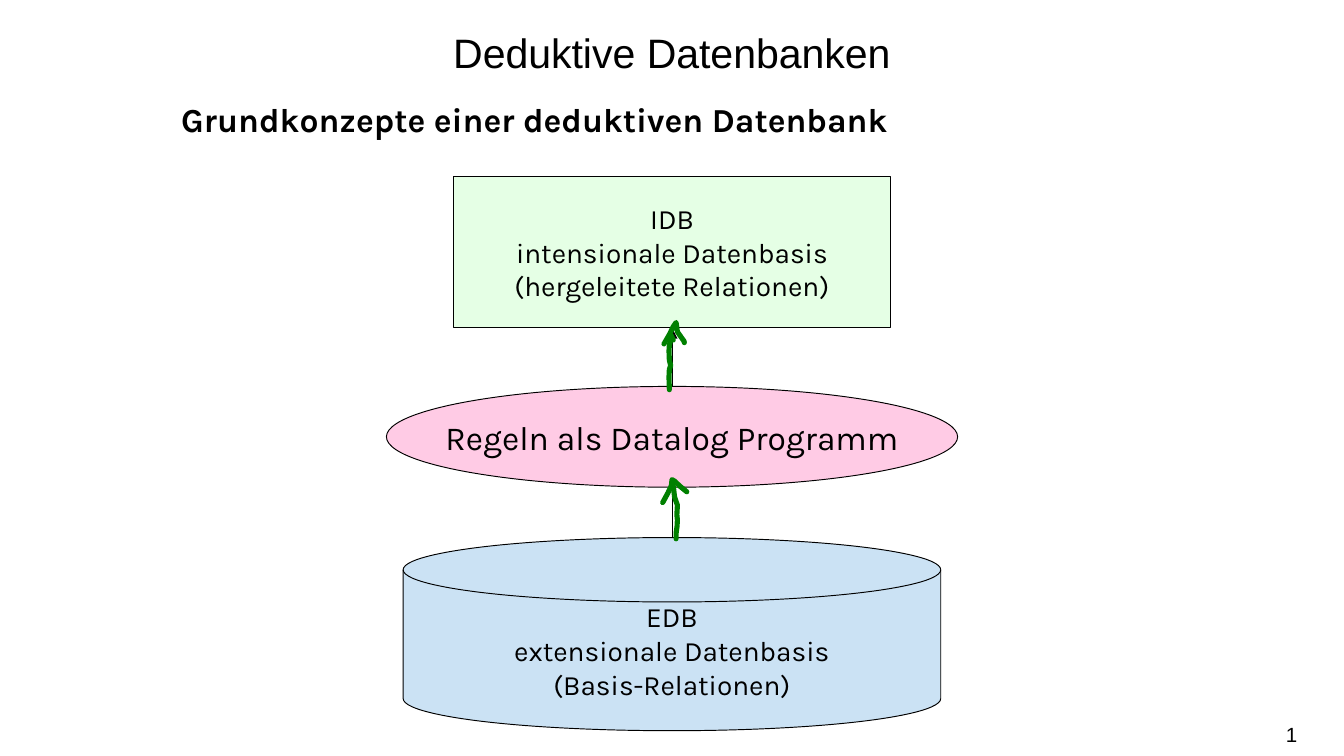
from dataclasses import dataclass

from lxml.etree import SubElement
from pptx import Presentation
from pptx.dml.color import RGBColor
from pptx.enum.shapes import MSO_CONNECTOR, MSO_SHAPE
from pptx.enum.text import MSO_ANCHOR as Anchor, PP_ALIGN as Align
from pptx.oxml.ns import qn
from pptx.util import Pt

BLACK = RGBColor(0x00, 0x00, 0x00)
LIGHT_GREEN = RGBColor(0xCC, 0xFF, 0xCC)
PINK = RGBColor(0xFF, 0x99, 0xCC)
BLUE = RGBColor(0x98, 0xC6, 0xEA)
INK_GREEN = RGBColor(0x00, 0x80, 0x00)

CENTER_X = 360
Stroke = list[tuple[float, float]]


@dataclass(frozen=True)
class Node:
    """A diagram shape centred on CENTER_X; "\\v" in a line is a line break."""
    preset: MSO_SHAPE
    top: float
    width: float
    height: float
    color: RGBColor
    font_size: float
    lines: tuple[str, ...]


@dataclass(frozen=True)
class Link:
    start_y: float
    end_y: float
    arrowhead: bool


IDB = Node(MSO_SHAPE.FLOWCHART_PROCESS, 94.5, 234, 81, LIGHT_GREEN, 15,
           ("IDB\vintensionale Datenbasis", "(hergeleitete Relationen)"))
EDB = Node(MSO_SHAPE.FLOWCHART_MAGNETIC_DISK, 288, 288, 103.5, BLUE, 15,
           ("EDB", "extensionale Datenbasis", "(Basis-Relationen)"))
RULES = Node(MSO_SHAPE.FLOWCHART_CONNECTOR, 207, 306, 54, PINK, 18,
             ("Regeln als Datalog Programm",))

LINKS = (
    Link(EDB.top, RULES.top + RULES.height, False),
    Link(RULES.top, IDB.top + IDB.height, True),
)

# Each hand-drawn arrow is a shaft stroke and a head stroke.
INK_ARROWS: tuple[tuple[Stroke, Stroke], ...] = (
    (
        [(360.7, 260.6), (361.4, 266.4), (362.9, 270.7), (362.6, 275.8),
         (362.9, 278.6), (362.7, 282.2), (362.2, 285.8), (362.2, 288.7)],
        [(355, 269.3), (357.8, 264.2), (359.7, 260.2), (360, 257),
         (361.4, 257.8), (364.3, 260.6), (367.9, 263.5)],
    ),
    (
        [(360.7, 182.2), (359.6, 179.7), (359.3, 182.2), (358.6, 185),
         (358.4, 188), (358.6, 193), (359.3, 195.8), (358.6, 198),
         (358.4, 202), (358.6, 208.8)],
        [(355.7, 184.3), (358.6, 179.3), (360.7, 175), (362.2, 172.8),
         (362.9, 177.8), (366.5, 182.9), (366.6, 183.6)],
    ),
)


def add_run(paragraph, text: str, font_name: str, size: float,
            bold: bool = False) -> None:
    run = paragraph.add_run()
    run.text = text
    run.font.name = font_name
    run.font.size = Pt(size)
    run.font.bold = bold
    run.font.color.rgb = BLACK


def add_node(slide, node: Node) -> None:
    shape = slide.shapes.add_shape(
        node.preset, Pt(CENTER_X - node.width / 2), Pt(node.top),
        Pt(node.width), Pt(node.height))
    shape.shadow.inherit = False
    shape.fill.solid()
    shape.fill.fore_color.rgb = node.color
    color = shape.fill._xPr.find(qn("a:solidFill"))[0]
    SubElement(color, qn("a:alpha"), val="50000")
    shape.line.color.rgb = BLACK
    shape.line.width = Pt(0.5)

    frame = shape.text_frame
    frame.word_wrap = False
    frame.vertical_anchor = Anchor.MIDDLE
    for index, line in enumerate(node.lines):
        paragraph = frame.add_paragraph() if index else frame.paragraphs[0]
        paragraph.alignment = Align.CENTER
        for part_index, part in enumerate(line.split("\v")):
            if part_index:
                paragraph.add_line_break()
            add_run(paragraph, part, "Karla", node.font_size)


def add_link(slide, link: Link) -> None:
    connector = slide.shapes.add_connector(
        MSO_CONNECTOR.STRAIGHT, Pt(CENTER_X), Pt(link.start_y),
        Pt(CENTER_X), Pt(link.end_y))
    connector.line.color.rgb = BLACK
    connector.line.width = Pt(0.5)
    if link.arrowhead:
        SubElement(connector.line._get_or_add_ln(), qn("a:tailEnd"),
                   type="triangle")
    SubElement(connector._element.spPr, qn("a:effectLst"))


def add_ink_arrow(slide, strokes: tuple[Stroke, Stroke]) -> None:
    shaft, head = [[(Pt(x), Pt(y)) for x, y in stroke] for stroke in strokes]
    builder = slide.shapes.build_freeform(*shaft[0])
    builder.add_line_segments(shaft[1:], close=False)
    builder.move_to(*head[0])
    builder.add_line_segments(head[1:], close=False)
    shape = builder.convert_to_shape()
    shape.shadow.inherit = False
    shape.fill.background()
    shape.line.color.rgb = INK_GREEN
    shape.line.width = Pt(2.75)
    outline = shape.line._get_or_add_ln()
    outline.set("cap", "rnd")
    SubElement(outline, qn("a:round"))


def add_title(slide) -> None:
    title = slide.shapes.title
    title.left, title.top = Pt(90), Pt(0)
    title.width, title.height = Pt(540), Pt(49.5)
    title.text_frame.vertical_anchor = Anchor.MIDDLE
    paragraph = title.text_frame.paragraphs[0]
    paragraph.alignment = Align.CENTER
    paragraph.line_spacing = 1.25
    add_run(paragraph, "Deduktive Datenbanken", "Arial", 22)


def add_subtitle(slide) -> None:
    box = slide.shapes.add_textbox(Pt(90), Pt(49.5), Pt(540), Pt(29))
    box.text_frame.word_wrap = True
    add_run(box.text_frame.paragraphs[0],
            "Grundkonzepte einer deduktiven Datenbank", "Karla", 18, bold=True)


def add_page_number(slide) -> None:
    box = slide.shapes.add_textbox(Pt(533.5), Pt(382.5), Pt(161.5), Pt(21.5))
    frame = box.text_frame
    frame.word_wrap = True
    frame.margin_left = frame.margin_right = Pt(0)
    frame.vertical_anchor = Anchor.MIDDLE
    paragraph = frame.paragraphs[0]
    paragraph.alignment = Align.RIGHT
    add_run(paragraph, "1", "Arial", 11)


def main() -> None:
    presentation = Presentation()
    presentation.slide_width = Pt(720)
    presentation.slide_height = Pt(405)
    slide = presentation.slides.add_slide(presentation.slide_layouts[5])

    add_title(slide)
    add_subtitle(slide)
    for node in (IDB, EDB, RULES):
        add_node(slide, node)
    for link in LINKS:
        add_link(slide, link)
    for strokes in INK_ARROWS:
        add_ink_arrow(slide, strokes)
    add_page_number(slide)

    presentation.save("out.pptx")


if __name__ == "__main__":
    main()
